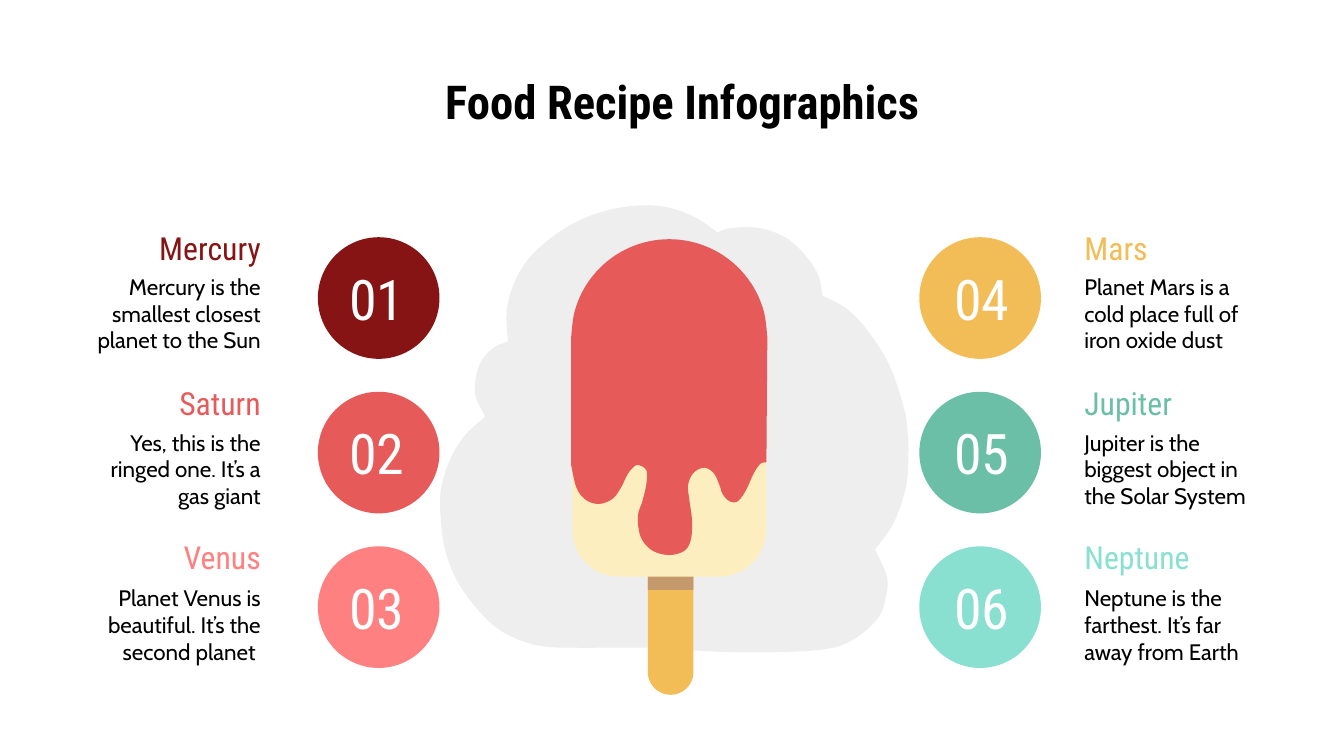
"""Build a food recipe infographic: six numbered notes around an ice lolly."""
from dataclasses import dataclass
from itertools import pairwise
from math import cos, pi, sin

from pptx import Presentation
from pptx.dml.color import RGBColor as Rgb
from pptx.enum.shapes import MSO_SHAPE as Kind
from pptx.enum.text import MSO_ANCHOR as Anchor, MSO_AUTO_SIZE as Fit, PP_ALIGN as Align
from pptx.util import Inches, Pt


@dataclass(frozen=True)
class Theme:
    head: str = "Roboto Condensed"
    body: str = "Cabin"
    title: int = 25
    digit: int = 30
    name: int = 17
    note: int = 12
    ink: str = "000000"
    pale: str = "FFFFFF"
    cloud: str = "EEEEEE"
    cream: str = "FCEEBE"
    glaze: str = "E65A5A"
    wood: str = "F2BC57"
    shade: str = "C49A6C"


look = Theme()
CELL = Inches(0.1)
deck = Presentation()
deck.slide_width, deck.slide_height = 100 * CELL, round(56.25 * CELL)
slide = deck.slides.add_slide(deck.slide_layouts[5])
shapes = slide.shapes


def write(box, area, text, size, color, align, font=look.head, anchor=Anchor.MIDDLE, bold=False):
    """Place a text holder on the grid and fill it with one run."""
    box.left, box.top, box.width, box.height = (round(n * CELL) for n in area)
    frame = box.text_frame
    frame.word_wrap, frame.auto_size, frame.vertical_anchor = True, Fit.NONE, anchor
    frame.margin_left = frame.margin_right = frame.margin_top = frame.margin_bottom = CELL
    para = frame.paragraphs[0]
    para.alignment = align
    run = para.add_run()
    run.text = text
    run.font.name, run.font.size, run.font.bold = font, Pt(size), bold
    run.font.color.rgb = Rgb.from_string(color)


def paint(shape, color):
    """Give a shape a flat fill without line or shadow."""
    shape.shadow.inherit = False
    shape.fill.solid()
    shape.fill.fore_color.rgb = Rgb.from_string(color)
    shape.line.fill.background()
    return shape


write(shapes.title, (5.8, 4.4, 89.9, 6.3), "Food Recipe Infographics", look.title,
      look.ink, Align.CENTER, anchor=Anchor.TOP, bold=True)

cloud = [
    [(53.4, 17.3), (51.6, 16.1), (49.5, 15.4), (47.3, 15.3), (45, 15.7), (42.9, 16.5),
     (41, 17.7), (39.3, 19.3), (38.2, 21.2), (37.7, 23.2), (37.8, 25.4)],
    [(37.8, 25.4), (36.7, 25.9), (35.8, 26.9), (35.4, 28.2), (35.4, 29.5), (36.1, 31)],
    [(36.1, 31), (34.5, 32.5), (33.4, 34.4), (32.8, 36.5), (32.8, 38.6), (33.1, 40.8),
     (33.8, 42.8), (35, 44.7), (36.8, 46.6), (38.6, 47.6), (40.5, 48.1), (42.9, 48.2),
     (48.4, 48.2), (53.6, 48.5), (58.6, 48.5), (61.4, 48.3), (62.9, 47.9), (64.2, 47.1),
     (65.4, 45.9), (65.9, 44.5), (66, 42.9), (65.1, 40.9)],
    [(65.1, 40.9), (66.5, 38.9), (67.4, 36.3), (67.6, 33.9), (67.5, 31.8), (67.2, 30.1),
     (66.1, 27), (64.4, 24.4), (62.9, 22.9), (61.2, 22)],
    [(61.2, 22), (60.9, 20.5), (60, 19.1), (58.8, 17.9), (57.4, 17.2), (55.9, 16.9),
     (54.2, 17), (53.4, 17.3)],
]
glaze = [
    [(49.8 + 7.3 * cos(pi * i / 12), 25.1 - 7.3 * sin(pi * i / 12)) for i in range(13)],
    [(42.5, 25.1), (42.5, 34.6)],
    [(42.5, 34.6), (42.9, 36.3), (43.6, 37.2), (44.6, 37.5), (45.6, 37.1), (46.2, 36.3),
     (46.7, 35.3), (47.1, 34.8), (47.5, 34.6), (48.1, 35), (48.1, 36), (47.8, 37.3),
     (47.5, 38.2), (47.5, 39.2), (47.8, 40.2), (48.6, 41), (49.8, 41.3), (50.9, 41),
     (51.4, 40.2), (51.5, 38.8), (51.3, 37.2), (51.2, 36.1), (51.6, 35.2), (52.4, 34.8),
     (53.1, 35.2), (53.5, 36), (53.8, 36.8), (54.3, 37.3), (54.9, 37.3), (55.5, 36.5),
     (56.1, 35.2), (56.6, 34.5), (57.1, 34.4)],
]
stick = [
    (Kind.ROUNDED_RECTANGLE, (48.2, 36.6, 3.4, 15.1), look.wood, (0.5,)),
    (Kind.ROUND_2_SAME_RECTANGLE, (48.2, 36.6, 3.4, 7.3), look.shade, (0.5, 0)),
    (Kind.ROUND_2_SAME_RECTANGLE, (42.6, 17.9, 14.4, 25), look.cream, (0.5, 0.24)),
]

for lobes, color in ((cloud, look.cloud), (glaze, look.glaze)):
    curve = []
    for lobe in lobes:
        ends = [lobe[0], *lobe, lobe[-1]]
        for i, (a, b) in enumerate(pairwise(lobe)):
            p, q = ends[i], ends[i + 3]
            for t in (0, 0.2, 0.4, 0.6, 0.8):
                ease = t * t * (3 - 2 * t)
                curve.append(tuple(
                    round(CELL * (b[k] * ease + a[k] * (1 - ease)
                                  + (b[k] - p[k]) / 2 * t * (1 - t) ** 2
                                  - (q[k] - a[k]) / 2 * t * t * (1 - t))) for k in (0, 1)))
    if lobes is glaze:
        for kind, area, tint, bends in stick:
            part = paint(shapes.add_shape(kind, *(round(n * CELL) for n in area)), tint)
            for k, bend in enumerate(bends):
                part.adjustments[k] = bend
    pen = shapes.build_freeform(*curve[0])
    pen.add_line_segments(curve[1:], close=True)
    paint(pen.convert_to_shape(), color)

sides = [
    (23.65, 24.2, 5.1, Align.RIGHT, [
        ("Mercury", "871414", "Mercury is the smallest closest planet to the Sun"),
        ("Saturn", "E65A5A", "Yes, this is the ringed one. It’s a gas giant"),
        ("Venus", "FF8080", "Planet Venus is beautiful. It’s the second planet "),
    ]),
    (68.4, 69.2, 79.7, Align.LEFT, [
        ("Mars", "F2BC57", "Planet Mars is a cold place full of iron oxide dust"),
        ("Jupiter", "6BBFA7", "Jupiter is the biggest object in the Solar System"),
        ("Neptune", "89DFD0", "Neptune is the farthest. It’s far away from Earth"),
    ]),
]
count = 0
for disc, digit, left, align, notes in sides:
    for row, (name, color, note) in enumerate(notes):
        count += 1
        top = 17.65 + 11.5 * row
        area = (round(n * CELL) for n in (disc, top, 9.05, 9.05))
        paint(shapes.add_shape(Kind.OVAL, *area), color)
        for area, text, size, tint, side, font, anchor in (
            ((digit, top + 1.15, 7.7, 6.7), f"{count:02}", look.digit, look.pale,
             Align.CENTER, look.head, Anchor.MIDDLE),
            ((left, 19.3 + 11.6 * row, 15.3, 7.6), note, look.note, look.ink,
             align, look.body, Anchor.TOP),
            ((left, top - 0.4, 15.3, 2.4), name, look.name, color,
             align, look.head, Anchor.MIDDLE),
        ):
            write(shapes.add_textbox(0, 0, 0, 0), area, text, size, tint, side, font, anchor)

deck.save("out.pptx")
